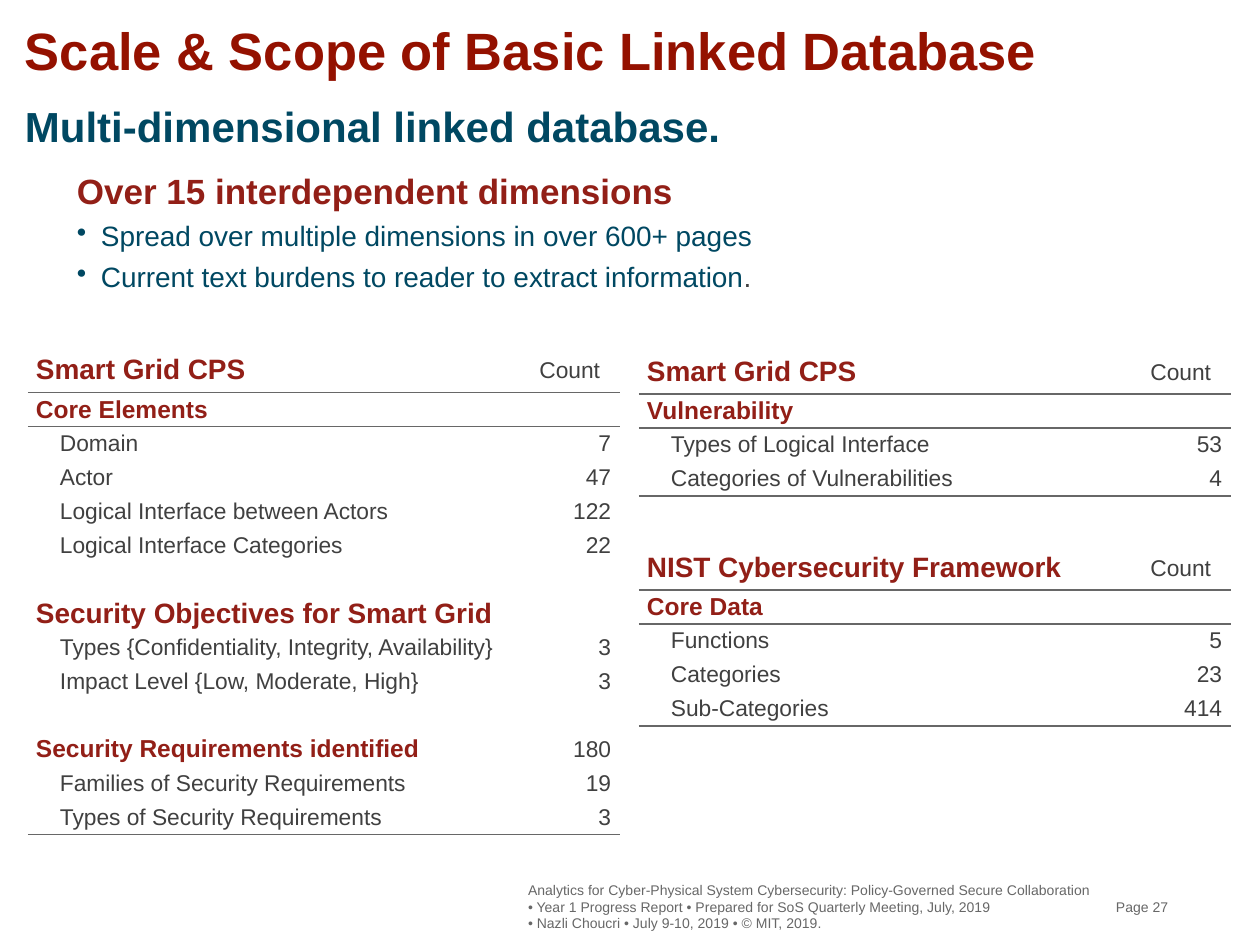
from dataclasses import dataclass

from lxml.etree import SubElement
from pptx import Presentation
from pptx.dml.color import RGBColor
from pptx.enum.text import MSO_ANCHOR, PP_ALIGN
from pptx.oxml.ns import qn
from pptx.util import Emu, Pt

EMU_PER_PX = 914400 / 126


@dataclass(frozen=True)
class Theme:
    font: str = "Arial"
    title: tuple = (30, "941100", True)
    subtitle: tuple = (24, "004862", True)
    lead: tuple = (20, "921F17", True)
    bullet: tuple = (16, "004862", False)
    full_stop: tuple = (16, "404040", False)
    section: tuple = (16, "921F17", True)
    group: tuple = (14, "921F17", True)
    item: tuple = (13, "404040", False)
    footer: tuple = (8, "676767", False)
    rule: str = "676767"
    cell: str = "FFFFFF"


THEME = Theme()
ROW_HEIGHT = 34
COLUMN_WIDTHS = (484, 108)
BULLET_INDENT = 24
LABEL_INSETS = {"section": 8, "group": 8, "item": 32}

SMART_GRID = [
    ("group", "Core Elements", ""),
    ("item", "Domain", "7"),
    ("item", "Actor", "47"),
    ("item", "Logical Interface between Actors", "122"),
    ("item", "Logical Interface Categories", "22"),
    ("item", "", ""),
    ("section", "Security Objectives for Smart Grid", ""),
    ("item", "Types {Confidentiality, Integrity, Availability}", "3"),
    ("item", "Impact Level {Low, Moderate, High}", "3"),
    ("item", "", ""),
    ("group", "Security Requirements identified", "180"),
    ("item", "Families of Security Requirements", "19"),
    ("item", "Types of Security Requirements", "3"),
]
VULNERABILITY = [
    ("group", "Vulnerability", ""),
    ("item", "Types of Logical Interface", "53"),
    ("item", "Categories of Vulnerabilities", "4"),
]
FRAMEWORK = [
    ("group", "Core Data", ""),
    ("item", "Functions", "5"),
    ("item", "Categories", "23"),
    ("item", "Sub-Categories", "414"),
]
FOOTER = [
    "Analytics for Cyber-Physical System Cybersecurity: Policy-Governed Secure Collaboration",
    "• Year 1 Progress Report • Prepared for SoS Quarterly Meeting, July, 2019",
    "• Nazli Choucri • July 9-10, 2019 • © MIT, 2019.",
]


def px(length):
    return Emu(round(length * EMU_PER_PX))


def apply(target, values):
    for attribute, value in values.items():
        setattr(target, attribute, value)


def margins(left, top, right, bottom):
    sides = {"left": left, "top": top, "right": right, "bottom": bottom}
    return {f"margin_{side}": px(length) for side, length in sides.items()}


def add_run(paragraph, text, style):
    size, color, bold = style
    run = paragraph.add_run()
    run.text = text
    apply(run.font, {"name": THEME.font, "size": Pt(size), "bold": bold})
    run.font.color.rgb = RGBColor.from_string(color)


def add_bullet(paragraph):
    properties = paragraph._p.get_or_add_pPr()
    properties.set("marL", str(px(BULLET_INDENT)))
    properties.set("indent", str(-px(BULLET_INDENT)))
    SubElement(properties, qn("a:buChar")).set("char", "•")


def add_text(slide, bounds, lines, insets, anchor=MSO_ANCHOR.TOP):
    frame = slide.shapes.add_textbox(*map(px, bounds)).text_frame
    apply(frame, {"word_wrap": True, "vertical_anchor": anchor, **margins(*insets)})
    for index, (text, style) in enumerate(lines):
        paragraph = frame.add_paragraph() if index else frame.paragraphs[0]
        add_run(paragraph, text, style)
    return frame


def add_key_points(slide):
    lines = [
        ("Over 15 interdependent dimensions", THEME.lead),
        ("Spread over multiple dimensions in over 600+ pages", THEME.bullet),
        ("Current text burdens to reader to extract information", THEME.bullet),
    ]
    frame = add_text(slide, (64, 168, 857, 134), lines, (13, 6, 13, 6))
    for paragraph in frame.paragraphs:
        apply(paragraph, {"line_spacing": 0.9, "space_after": Pt(3)})
    for paragraph in frame.paragraphs[1:]:
        add_bullet(paragraph)
        paragraph.space_before = Pt(3)
    add_run(frame.paragraphs[-1], ".", THEME.full_stop)


def add_border(cell, side):
    line = SubElement(cell._tc.get_or_add_tcPr(), qn(f"a:{side}"))
    line.set("w", str(Pt(1)))
    fill = SubElement(line, qn("a:solidFill"))
    SubElement(fill, qn("a:srgbClr")).set("val", THEME.rule)


def fill_cell(cell, text, style, insets, anchor, align):
    apply(cell, {"vertical_anchor": anchor, **margins(*insets)})
    paragraph = cell.text_frame.paragraphs[0]
    paragraph.alignment = align
    if text:
        add_run(paragraph, text, style)
    else:
        SubElement(paragraph._p, qn("a:endParaRPr")).set("sz", str(style[0] * 100))


def add_count_table(slide, left, top, header_height, heading, entries):
    rows = [("section", heading, "Count"), *entries]
    last = len(rows) - 1
    height = header_height + last * ROW_HEIGHT
    bounds = map(px, (left, top, sum(COLUMN_WIDTHS), height))
    table = slide.shapes.add_table(len(rows), len(COLUMN_WIDTHS), *bounds).table
    apply(table, {"first_row": False, "horz_banding": False})
    style_id = table._tbl.tblPr.find(qn("a:tableStyleId"))
    style_id.text = "{2D5ABB26-0587-4C30-8999-92F81FD0307C}"
    for column, width in zip(table.columns, COLUMN_WIDTHS):
        column.width = px(width)
    for index, (kind, label, count) in enumerate(rows):
        header = index == 0
        table.rows[index].height = px(ROW_HEIGHT if index else header_height)
        anchor = MSO_ANCHOR.BOTTOM if header else MSO_ANCHOR.MIDDLE
        label_insets = (LABEL_INSETS[kind], 4 * header, 8, 7 * header)
        count_insets = (8, 0, 20, 9) if header else (8, 0, 9, 0)
        label_cell, count_cell = table.rows[index].cells
        fill_cell(label_cell, label, getattr(THEME, kind), label_insets, anchor, PP_ALIGN.LEFT)
        fill_cell(count_cell, count, THEME.item, count_insets, anchor, PP_ALIGN.RIGHT)
        for cell in (label_cell, count_cell):
            if index == 1:
                add_border(cell, "lnT")
            if index in (0, last):
                add_border(cell, "lnB")
            if header:
                cell.fill.background()
            else:
                cell.fill.solid()
                cell.fill.fore_color.rgb = RGBColor.from_string(THEME.cell)


def main():
    deck = Presentation()
    apply(deck, {"slide_width": px(1260), "slide_height": px(945)})
    slide = deck.slides.add_slide(deck.slide_layouts[6])
    flush = (0, 0, 0, 0)
    title = [("Scale & Scope of Basic Linked Database", THEME.title)]
    add_text(slide, (25, 14, 1210, 67), title, flush, MSO_ANCHOR.BOTTOM)
    subtitle = [("Multi-dimensional linked database.", THEME.subtitle)]
    add_text(slide, (25, 101, 1169, 74), subtitle, flush)
    add_key_points(slide)
    add_count_table(slide, 28, 348, 43, "Smart Grid CPS", SMART_GRID)
    add_count_table(slide, 639, 348, 46, "Smart Grid CPS", VULNERABILITY)
    add_count_table(slide, 639, 544, 46, "NIST Cybersecurity Framework", FRAMEWORK)
    footer = [(line, THEME.footer) for line in FOOTER]
    footer_insets = (10, 5, 10, 5)
    add_text(slide, (518, 877, 583, 59), footer, footer_insets, MSO_ANCHOR.MIDDLE)
    page = [("Page 27", THEME.footer)]
    add_text(slide, (1106, 877, 86, 59), page, footer_insets, MSO_ANCHOR.MIDDLE)
    deck.save("out.pptx")


if __name__ == "__main__":
    main()
